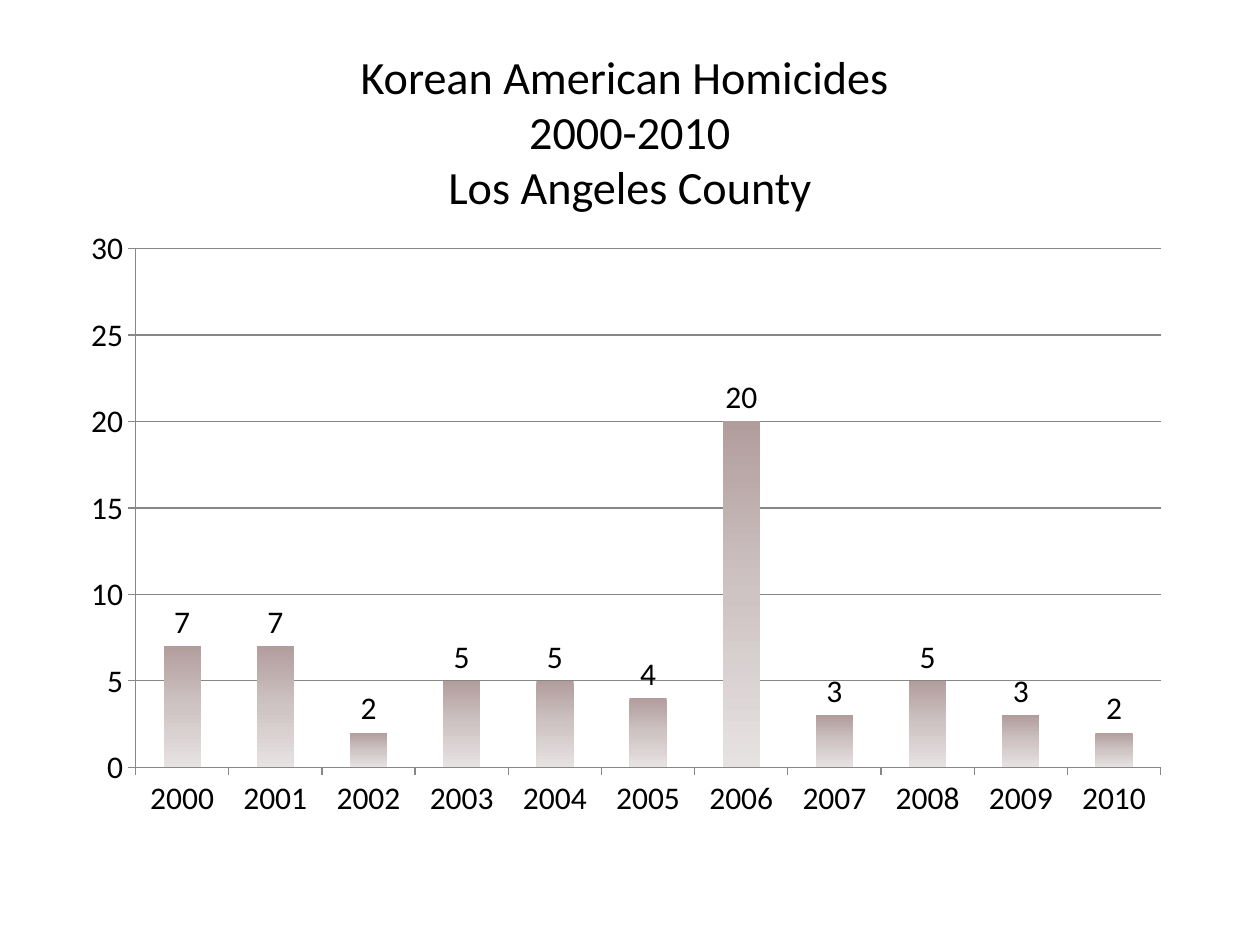
import dataclasses

import lxml.etree
import pptx
import pptx.chart.data
import pptx.dml.color
import pptx.enum.chart
import pptx.enum.text
import pptx.oxml
import pptx.oxml.ns
import pptx.util
from pptx.util import Inches

COLORS = {
    "text": "000000",
    "axis": "878787",
    "bar_top": "B29D9D",
    "bar_middle": "CFC4C4",
    "bar_bottom": "E7E2E2",
}
FONT_NAME = "Calibri"
FIRST_YEAR = 2000
HOMICIDES = (7, 7, 2, 5, 5, 4, 20, 3, 5, 3, 2)


@dataclasses.dataclass(frozen=True)
class Box:
    left: float
    top: float
    width: float
    height: float


TITLE_BOX = Box(0.5, 0.3, 9, 1.25)
CHART_BOX = Box(0.5, 1.75, 9, 4.95)
PLOT_SHARE = Box(0.064, 0.045, 0.904, 0.832)
GRADIENT = ((0, "bar_top"), (50, "bar_middle"), (100, "bar_bottom"))


def rgb(name: str) -> pptx.dml.color.RGBColor:
    return pptx.dml.color.RGBColor.from_string(COLORS[name])


def lengths(box: Box) -> list:
    return [Inches(value) for value in dataclasses.astuple(box)]


def style_font(font, size: float) -> None:
    font.name = FONT_NAME
    font.size = pptx.util.Pt(size)
    font.color.rgb = rgb("text")


def add_title(slide) -> None:
    text_frame = slide.shapes.add_textbox(*lengths(TITLE_BOX)).text_frame
    text_frame.word_wrap = True
    text_frame.margin_top = Inches(0.08)
    text_frame.vertical_anchor = pptx.enum.text.MSO_ANCHOR.TOP
    text_frame.text = "Korean American Homicides \v2000-2010\nLos Angeles County"
    for paragraph in text_frame.paragraphs:
        paragraph.alignment = pptx.enum.text.PP_ALIGN.CENTER
        for run in paragraph.runs:
            style_font(run.font, 26.4)


def fill_with_gradient(series) -> None:
    """Fill the bars from top to bottom with all GRADIENT stops."""
    fill = series.format.fill
    fill.gradient()
    fill.gradient_angle = 270
    stop_list = series._element.find(".//" + pptx.oxml.ns.qn("a:gsLst"))
    for stop in list(stop_list):
        stop_list.remove(stop)
    for percent, name in GRADIENT:
        stop = lxml.etree.SubElement(stop_list, pptx.oxml.ns.qn("a:gs"), pos=str(percent * 1000))
        lxml.etree.SubElement(stop, pptx.oxml.ns.qn("a:srgbClr"), val=COLORS[name])


def place_plot(chart, share: Box) -> None:
    """Fix the inner plot area as shares of the chart's size."""
    plot_area = chart._chartSpace.chart.plotArea
    layout_tag = pptx.oxml.ns.qn("c:layout")
    for old_layout in plot_area.findall(layout_tag):
        plot_area.remove(old_layout)
    layout = pptx.oxml.parse_xml(f"<c:layout {pptx.oxml.ns.nsdecls('c')}/>")
    manual = lxml.etree.SubElement(layout, pptx.oxml.ns.qn("c:manualLayout"))
    settings = {
        "layoutTarget": "inner", "xMode": "edge", "yMode": "edge",
        "x": share.left, "y": share.top, "w": share.width, "h": share.height,
    }
    for tag, value in settings.items():
        lxml.etree.SubElement(manual, pptx.oxml.ns.qn(f"c:{tag}"), val=str(value))
    plot_area.insert(0, layout)


def style_line(line) -> None:
    line.color.rgb = rgb("axis")
    line.width = pptx.util.Pt(0.75)


def add_homicide_chart(slide) -> None:
    chart_data = pptx.chart.data.CategoryChartData()
    chart_data.categories = [str(FIRST_YEAR + index) for index in range(len(HOMICIDES))]
    chart_data.add_series("Series 1", HOMICIDES)
    chart = slide.shapes.add_chart(
        pptx.enum.chart.XL_CHART_TYPE.COLUMN_CLUSTERED, *lengths(CHART_BOX), chart_data
    ).chart
    chart.has_title = False
    chart.has_legend = False
    style_font(chart.font, 18)

    for axis in (chart.category_axis, chart.value_axis):
        axis.major_tick_mark = pptx.enum.chart.XL_TICK_MARK.OUTSIDE
        axis.minor_tick_mark = pptx.enum.chart.XL_TICK_MARK.NONE
        style_line(axis.format.line)
    value_axis = chart.value_axis
    value_axis.minimum_scale = 0
    value_axis.maximum_scale = 30
    value_axis.major_unit = 5
    value_axis.has_major_gridlines = True
    style_line(value_axis.major_gridlines.format.line)

    plot = chart.plots[0]
    plot.gap_width = 150
    plot.vary_by_categories = False
    plot.has_data_labels = True
    plot.data_labels.show_value = True
    plot.data_labels.position = pptx.enum.chart.XL_LABEL_POSITION.OUTSIDE_END
    style_font(plot.data_labels.font, 18)
    fill_with_gradient(plot.series[0])
    place_plot(chart, PLOT_SHARE)


def main() -> None:
    presentation = pptx.Presentation()
    presentation.slide_width = Inches(10)
    presentation.slide_height = Inches(7.5)
    slide = presentation.slides.add_slide(presentation.slide_layouts[6])
    add_title(slide)
    add_homicide_chart(slide)
    presentation.save("out.pptx")


if __name__ == "__main__":
    main()
